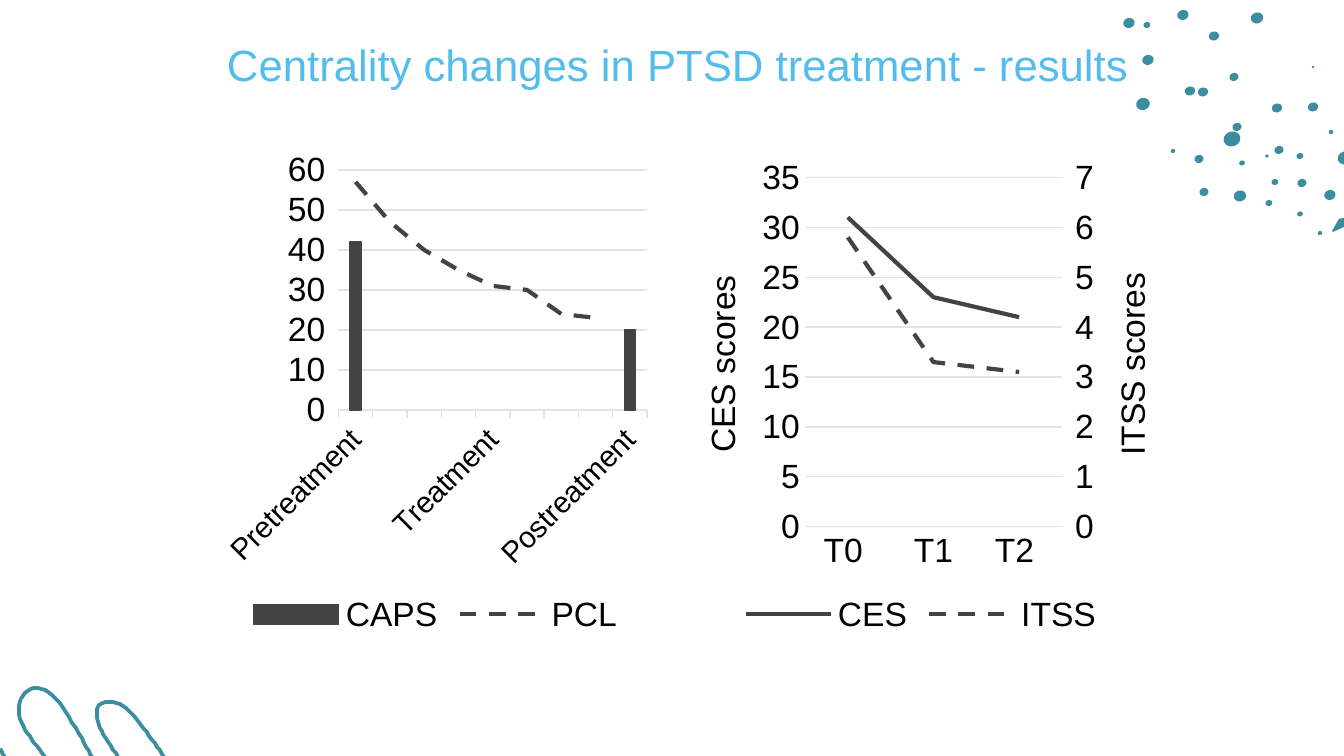
import copy

import pptx
import pptx.chart.data
import pptx.dml.color
import pptx.enum.chart
import pptx.enum.dml
import pptx.enum.shapes
import pptx.enum.text
import pptx.oxml
import pptx.oxml.ns
import pptx.util

PX = 914400 / 134.4
RGB = pptx.dml.color.RGBColor
TEAL, SKY = RGB(0x3C, 0x8D, 0xA0), RGB(0x52, 0xBD, 0xEC)
CHARCOAL, RULE, BLACK = RGB(0x43, 0x43, 0x43), RGB(0xE3, 0xE3, 0xE3), RGB(0, 0, 0)
CHART = pptx.enum.chart
TYPES = CHART.XL_CHART_TYPE

# ---- Content ----
TITLE = "Centrality changes in PTSD treatment - results"
SYMPTOMS = dict(
    type=TYPES.COLUMN_CLUSTERED, frame=(215, 140, 441, 500), plot=(340, 168, 307, 241),
    categories=["Pretreatment", "", "", "", "Treatment", "", "", "", "Postreatment"],
    series=[("CAPS", [42] + [None] * 7 + [20]),
            ("PCL", [57, 47, 40, 35, 31, 30, 24, 23, None])],
    top=60, step=10, label_size=16, tick=CHART.XL_TICK_MARK.OUTSIDE)
CENTRALITY = dict(
    type=TYPES.LINE, frame=(669, 148, 504, 492), plot=(805, 177, 259, 348),
    categories=["T0 ", "T1", "T2 "],
    series=[("CES", [31, 23, 21]), ("ITSS", [5.8, 3.3, 3.1])],
    top=35, step=5, label_size=18, tick=CHART.XL_TICK_MARK.NONE,
    axis_title="CES scores", right=dict(title="ITSS scores", top=7, step=1))

# Dots: centre x, centre y, height
DOTS = [(1232, 139, 15), (1242, 163, 5), (1267, 156, 3), (1275, 182, 6), (1300, 214, 5),
        (1320, 233, 4), (1330, 195, 10), (1302, 183, 8), (1269, 203, 6), (1300, 156, 6),
        (1279, 150, 8), (1277, 108, 9), (1237, 127, 8), (1234, 77, 8), (1203, 92, 9),
        (1190, 91, 9), (1214, 36, 9), (1148, 60, 10), (1183, 15, 10), (1147, 25, 6),
        (1129, 23, 10), (1143, 104, 12), (1313, 67, 2), (1313, 107, 9), (1331, 132, 4),
        (1345, 158, 13), (1240, 196, 11), (1204, 192, 8), (1199, 159, 8), (1173, 151, 4),
        (1257, 18, 11)]
LEAF = [(1343, 218), (1339, 219), (1332, 231), (1333, 232), (1344, 227), (1347, 217)]
# Loops: a start point, then three points for each Bezier curve
LOOPS = [
    [(45, 757), (36, 744), (27, 735), (22, 723), (16, 708), (19, 694), (31, 689),
     (42, 684), (55, 695), (65, 711), (78, 732), (87, 748), (92, 757)],
    [(118, 757), (110, 744), (103, 735), (99, 725), (95, 712), (96, 704), (106, 702),
     (118, 700), (128, 708), (138, 721), (148, 734), (157, 746), (164, 757)],
    [(0, 749), (2, 752), (3, 754), (5, 757)]]


def emu(*lengths):
    return [round(length * PX) for length in lengths]


def write(frame, text, size, color, align=pptx.enum.text.PP_ALIGN.LEFT):
    frame.text = text
    frame.paragraphs[0].alignment = align
    style(frame.paragraphs[0].font, size, color)


def style(font, size, color=BLACK):
    font.name, font.size, font.bold = "Arial", pptx.util.Pt(size), False
    font.color.rgb = color


def stroke(line, color, width):
    line.color.rgb = color
    line.width = pptx.util.Pt(width)


def bezier(points, steps=10):
    curve = [points[0]]
    for i in range(0, len(points) - 1, 3):
        for t in (n / steps for n in range(1, steps + 1)):
            weights = ((1 - t) ** 3, 3 * t * (1 - t) ** 2, 3 * t * t * (1 - t), t ** 3)
            curve.append(tuple(sum(w * p[k] for w, p in zip(weights, points[i:i + 4]))
                               for k in (0, 1)))
    return curve


def outline(slide, points, close):
    builder = slide.shapes.build_freeform(*points[0], scale=PX)
    builder.add_line_segments(points[1:], close=close)
    shape = builder.convert_to_shape()
    shape.shadow.inherit = False
    return shape


def set_values(element, **values):
    for tag, value in values.items():
        for node in element.xpath(f".//c:{tag}"):
            node.set("val", str(value))


def place_plot(chart, frame, plot):
    area = chart._chartSpace.chart.plotArea
    for old in area.xpath("./c:layout"):
        area.remove(old)
    x, y = ((plot[i] - frame[i]) / frame[i + 2] for i in (0, 1))
    w, h = (plot[i] / frame[i] for i in (2, 3))
    parts = "".join(f'<c:{tag} val="{value}"/>' for tag, value in [
        ("layoutTarget", "inner"), ("xMode", "edge"), ("yMode", "edge"),
        ("x", round(x, 2)), ("y", round(y, 2)), ("w", round(w, 2)), ("h", round(h, 2))])
    area.insert(0, pptx.oxml.parse_xml(
        f'<c:layout {pptx.oxml.ns.nsdecls("c")}><c:manualLayout>{parts}'
        '</c:manualLayout></c:layout>'))


def split_last_series(chart, right):
    """Move the last series to its own line plot, with a right axis if given."""
    area = chart._chartSpace.chart.plotArea
    first = area.xpath("./c:barChart | ./c:lineChart")[0]
    series = first.xpath("./c:ser")[-1]
    for node in series.xpath("./c:invertIfNegative"):
        series.remove(node)
    ids = [node.get("val") for node in first.xpath("./c:axId")]
    if right:
        category, value = area.xpath("./c:catAx")[0], area.xpath("./c:valAx")[0]
        ids = ["5001", "5002"]
        right_category, right_value = copy.deepcopy(category), copy.deepcopy(value)
        set_values(right_category, axId=ids[0], crossAx=ids[1], delete=1)
        set_values(right_value, axId=ids[1], crossAx=ids[0], axPos="r", crosses="max",
                   max=right["top"], majorUnit=right["step"], majorTickMark="out")
        right_value.remove(right_value.xpath("./c:majorGridlines")[0])
        right_value.xpath("./c:title//a:t")[0].text = right["title"]
        value.addnext(right_value)
        right_value.addnext(right_category)
    plot = pptx.oxml.parse_xml(
        f'<c:lineChart {pptx.oxml.ns.nsdecls("c")}><c:grouping val="standard"/>'
        f'<c:varyColors val="0"/><c:marker val="1"/><c:axId val="{ids[0]}"/>'
        f'<c:axId val="{ids[1]}"/></c:lineChart>')
    plot.insert(2, series)
    first.addnext(plot)


def add_scores(slide, spec_):
    data = pptx.chart.data.CategoryChartData()
    data.categories = spec_["categories"]
    for name, values in spec_["series"]:
        data.add_series(name, values)
    chart = slide.shapes.add_chart(spec_["type"], *emu(*spec_["frame"]), data).chart
    chart.has_title = False
    style(chart.font, 10, CHARCOAL)
    chart.has_legend = True
    chart.legend.position = CHART.XL_LEGEND_POSITION.BOTTOM
    chart.legend.include_in_layout = False
    style(chart.legend.font, 18)
    place_plot(chart, spec_["frame"], spec_["plot"])

    # Axes
    categories, scores = chart.category_axis, chart.value_axis
    categories.major_tick_mark = scores.major_tick_mark = spec_["tick"]
    style(categories.tick_labels.font, spec_["label_size"])
    style(scores.tick_labels.font, 18)
    stroke(categories.format.line, RULE, 0.75)
    scores.format.line.fill.background()
    scores.has_major_gridlines = True
    stroke(scores.major_gridlines.format.line, RULE, 0.75)
    scores.minimum_scale, scores.maximum_scale = 0, spec_["top"]
    scores.major_unit = spec_["step"]
    if "axis_title" in spec_:
        write(scores.axis_title.text_frame, spec_["axis_title"], 18, BLACK,
              pptx.enum.text.PP_ALIGN.CENTER)
        scores.axis_title._element.xpath(".//a:bodyPr")[0].set("rot", "-5400000")
    else:
        categories._element.xpath("./c:txPr/a:bodyPr")[0].set("rot", "-2700000")

    # Series
    split_last_series(chart, spec_.get("right"))
    for plot in chart.plots:
        plot.vary_by_categories = False
        for series in plot.series:
            if isinstance(plot, pptx.chart.plot.BarPlot):
                plot.gap_width = 219
                series.format.fill.solid()
                series.format.fill.fore_color.rgb = CHARCOAL
                stroke(series.format.line, CHARCOAL, 0.75)
            else:
                series.smooth = False
                series.marker.style = CHART.XL_MARKER_STYLE.NONE
                stroke(series.format.line, CHARCOAL, 2.25)
    dashed = chart.plots[1].series[0]
    dashed.format.line.dash_style = pptx.enum.dml.MSO_LINE.DASH


def main():
    deck = pptx.Presentation()
    deck.slide_width, deck.slide_height = emu(1344, 756)
    slide = deck.slides.add_slide(deck.slide_layouts[5])

    # Title
    title = slide.shapes.title
    title.left, title.top, title.width, title.height = emu(227, 31, 919, 59)
    frame = title.text_frame
    frame.margin_left = frame.margin_top = frame.margin_right = frame.margin_bottom = 0
    frame.word_wrap = True
    frame.auto_size = pptx.enum.text.MSO_AUTO_SIZE.NONE
    frame.vertical_anchor = pptx.enum.text.MSO_ANCHOR.BOTTOM
    write(frame, TITLE, 23.4, SKY)

    # Corner decoration
    shapes = [outline(slide, LEAF, True)]
    for x, y, height in DOTS:
        width = 1.15 * height
        dot = slide.shapes.add_shape(
            pptx.enum.shapes.MSO_SHAPE.OVAL,
            *emu(x - width / 2, y - height / 2, width, height))
        dot.rotation = 343.5
        dot.shadow.inherit = False
        shapes.append(dot)
    for shape in shapes:
        shape.fill.solid()
        shape.fill.fore_color.rgb = TEAL
        shape.line.fill.background()
    for points in LOOPS:
        loop = outline(slide, bezier(points), False)
        loop.fill.background()
        stroke(loop.line, TEAL, 2)

    # Charts
    for scores in (SYMPTOMS, CENTRALITY):
        add_scores(slide, scores)
    deck.save("out.pptx")


if __name__ == "__main__":
    main()
